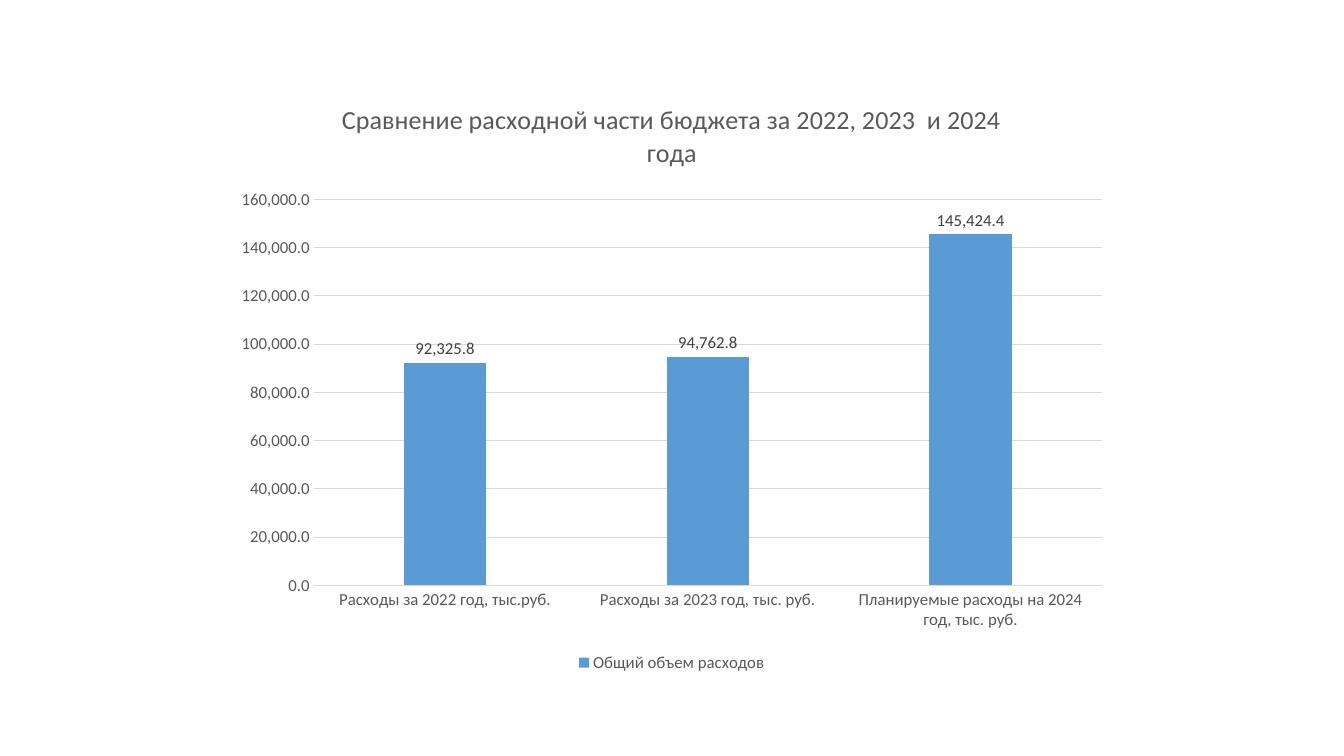
from dataclasses import dataclass

from pptx import Presentation
from pptx.chart.data import CategoryChartData
from pptx.dml.color import RGBColor
from pptx.enum.chart import XL_CHART_TYPE as ChartType
from pptx.enum.chart import XL_LABEL_POSITION as LabelPosition
from pptx.enum.chart import XL_LEGEND_POSITION as LegendPosition
from pptx.enum.chart import XL_TICK_MARK as TickMark
from pptx.util import Cm, Pt


@dataclass(frozen=True)
class Theme:
    font: str = "Calibri"
    text: str = "595959"
    label: str = "404040"
    grid: str = "D9D9D9"
    bar: str = "5B9BD5"
    title_size: float = 18.6
    body_size: float = 12
    line_width: float = 0.75
    number_format: str = "#,##0.0"


class BudgetSlide:
    def __init__(self, deck, theme):
        self.theme = theme
        self.slide = deck.slides.add_slide(deck.slide_layouts[6])

    def format_font(self, font, size, color):
        font.name = self.theme.font
        font.size = Pt(size)
        font.bold = False
        font.color.rgb = RGBColor.from_string(color)

    def format_line(self, line):
        line.color.rgb = RGBColor.from_string(self.theme.grid)
        line.width = Pt(self.theme.line_width)

    def add_text(self, frame, text, *, size, color):
        para = frame.paragraphs[0]
        span = para.add_run()
        span.text = text
        self.format_font(span.font, size, color)

    def add_columns(self, title, series_name, expenses, *, left, top, width, height):
        data = CategoryChartData(number_format=self.theme.number_format)
        data.categories = list(expenses)
        data.add_series(series_name, expenses.values())
        chart = self.slide.shapes.add_chart(
            ChartType.COLUMN_CLUSTERED, left, top, width, height, data
        ).chart
        self.format_font(chart.font, self.theme.body_size, self.theme.text)
        chart.has_title = True
        self.add_text(chart.chart_title.text_frame, title,
                      size=self.theme.title_size, color=self.theme.text)
        chart.chart_title.include_in_layout = False
        self.style_bars(chart.plots[0])
        self.style_axes(chart)
        self.add_legend(chart)

    def style_bars(self, plot):
        plot.gap_width = 219
        plot.overlap = -27
        plot.vary_by_categories = False
        fill = plot.series[0].format.fill
        fill.solid()
        fill.fore_color.rgb = RGBColor.from_string(self.theme.bar)
        plot.has_data_labels = True
        labels = plot.data_labels
        labels.show_value = True
        labels.position = LabelPosition.OUTSIDE_END
        labels.number_format = self.theme.number_format
        labels.number_format_is_linked = False
        self.format_font(labels.font, self.theme.body_size, self.theme.label)

    def style_axes(self, chart):
        for axis in (chart.category_axis, chart.value_axis):
            axis.major_tick_mark = TickMark.NONE
            axis.minor_tick_mark = TickMark.NONE
            self.format_font(axis.tick_labels.font, self.theme.body_size, self.theme.text)
        self.format_line(chart.category_axis.format.line)
        values = chart.value_axis
        values.minimum_scale = 0
        values.maximum_scale = 160000
        values.major_unit = 20000
        values.format.line.fill.background()
        values.has_major_gridlines = True
        self.format_line(values.major_gridlines.format.line)
        values.tick_labels.number_format = self.theme.number_format
        values.tick_labels.number_format_is_linked = False

    def add_legend(self, chart):
        chart.has_legend = True
        chart.legend.position = LegendPosition.BOTTOM
        chart.legend.include_in_layout = False
        self.format_font(chart.legend.font, self.theme.body_size, self.theme.text)


def main():
    deck = Presentation()
    deck.slide_width = Cm(33.87)
    deck.slide_height = Cm(19.05)
    page = BudgetSlide(deck, Theme())
    page.add_columns(
        "Сравнение расходной части бюджета за 2022, 2023  и 2024 года",
        "Общий объем расходов",
        {
            "Расходы за 2022 год, тыс.руб.": 92325.8,
            "Расходы за 2023 год, тыс. руб.": 94762.8,
            "Планируемые расходы на 2024 год, тыс. руб.": 145424.4,
        },
        left=Cm(5.64), top=Cm(2), width=Cm(22.58), height=Cm(15.05),
    )
    deck.save("out.pptx")


if __name__ == "__main__":
    main()
